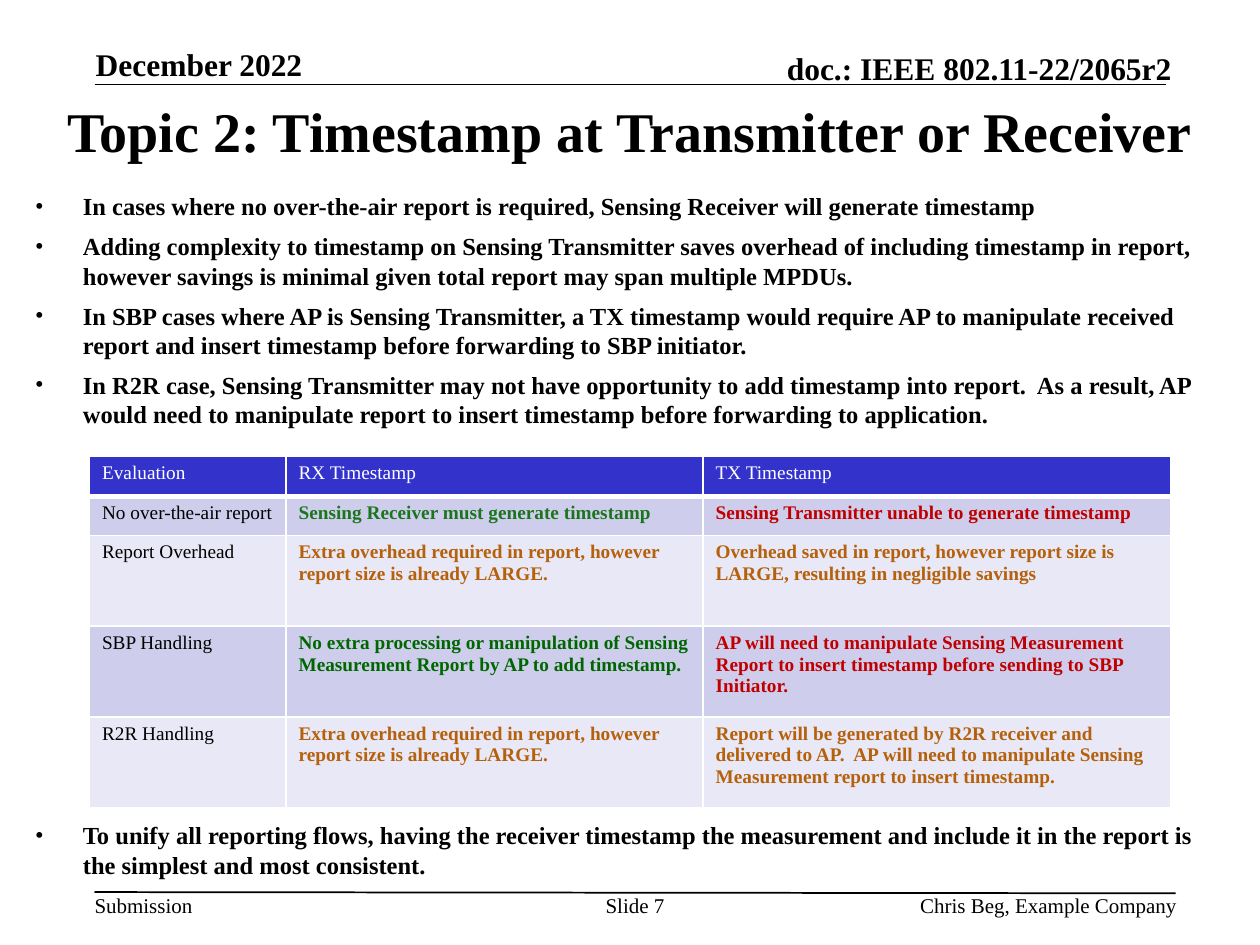
from dataclasses import dataclass

from lxml import etree
from pptx import Presentation
from pptx import util as u
from pptx.dml.color import RGBColor
from pptx.enum import shapes, text
from pptx.oxml import ns

PX = 9144  # EMU in one px, at 100 px to the inch


@dataclass(frozen=True)
class Theme:
    font: str = "Times New Roman"
    ink: str = "000000"
    white: str = "FFFFFF"
    header_fill: str = "3333CC"
    bands: tuple[str, str] = ("CECEEC", "E8E8F6")
    good: str = "1B751D"
    best: str = "006600"
    fair: str = "B5600B"
    bad: str = "C00000"
    title: int = 32
    running_head: int = 18
    body: int = 14
    footer: int = 12
    table: int = 11


@dataclass(frozen=True)
class Area:
    left: int
    top: int
    width: int
    height: int

    def emu(self) -> list[int]:
        return [n * PX for n in (self.left, self.top, self.width, self.height)]


@dataclass(frozen=True)
class Label:
    words: str
    area: Area
    size: int
    bold: bool = False
    align: text.PP_ALIGN = text.PP_ALIGN.LEFT
    anchor: text.MSO_ANCHOR = text.MSO_ANCHOR.TOP
    margins: tuple[int, int] = (0, 0)


@dataclass(frozen=True)
class Verdict:
    words: str
    color: str


@dataclass(frozen=True)
class Evaluation:
    topic: str
    receiver: Verdict
    transmitter: Verdict


THEME = Theme()
PADDING = (10, 5)
INDENT = 38
RULES = [(75, 67, 925, 67), (75, 708, 933, 709)]

LABELS = [
    Label("December 2022", Area(76, 36, 205, 30), THEME.running_head, True,
          anchor=text.MSO_ANCHOR.BOTTOM),
    Label("doc.: IEEE 802.11-22/2065r2", Area(547, 39, 383, 30), THEME.running_head, True,
          text.PP_ALIGN.RIGHT, text.MSO_ANCHOR.BOTTOM),
    Label("Topic 2: Timestamp at Transmitter or Receiver", Area(18, 75, 964, 56),
          THEME.title, True, text.PP_ALIGN.CENTER, text.MSO_ANCHOR.MIDDLE, PADDING),
    Label("Submission", Area(75, 708, 79, 20), THEME.footer),
    Label("Slide 7", Area(475, 708, 58, 40), THEME.footer, align=text.PP_ALIGN.CENTER),
    Label("Chris Beg, Example Company", Area(586, 708, 348, 20), THEME.footer,
          align=text.PP_ALIGN.RIGHT),
]

ARGUMENTS = [
    "In cases where no over-the-air report is required, Sensing Receiver will generate timestamp",
    "Adding complexity to timestamp on Sensing Transmitter saves overhead of including timestamp "
    "in report, however savings is minimal given total report may span multiple MPDUs.",
    "In SBP cases where AP is Sensing Transmitter, a TX timestamp would require AP to manipulate "
    "received report and insert timestamp before forwarding to SBP initiator.",
    "In R2R case, Sensing Transmitter may not have opportunity to add timestamp into report.  "
    "As a result, AP would need to manipulate report to insert timestamp before forwarding to "
    "application.",
]
CONCLUSION = [
    "To unify all reporting flows, having the receiver timestamp the measurement and include it "
    "in the report is the simplest and most consistent.",
]

TABLE_AREA = Area(71, 362, 858, 279)
COLUMN_WIDTHS = [156, 331, 371]
ROW_HEIGHTS = [32, 31, 72, 72, 72]
HEADINGS = ["Evaluation", "RX Timestamp", "TX Timestamp"]
EXTRA_OVERHEAD = Verdict(
    "Extra overhead required in report, however report size is already LARGE.", THEME.fair)
EVALUATIONS = [
    Evaluation("No over-the-air report",
               Verdict("Sensing Receiver must generate timestamp", THEME.good),
               Verdict("Sensing Transmitter unable to generate timestamp", THEME.bad)),
    Evaluation("Report Overhead", EXTRA_OVERHEAD,
               Verdict("Overhead saved in report, however report size is LARGE, resulting in "
                       "negligible savings", THEME.fair)),
    Evaluation("SBP Handling",
               Verdict("No extra processing or manipulation of Sensing Measurement Report by AP "
                       "to add timestamp.", THEME.best),
               Verdict("AP will need to manipulate Sensing Measurement Report to insert timestamp "
                       "before sending to SBP Initiator.", THEME.bad)),
    Evaluation("R2R Handling", EXTRA_OVERHEAD,
               Verdict("Report will be generated by R2R receiver and delivered to AP.  AP will "
                       "need to manipulate Sensing Measurement report to insert timestamp.",
                       THEME.fair)),
]


def write(para, words: str, *, size: int, bold: bool = False, color: str = THEME.ink,
          align: text.PP_ALIGN = text.PP_ALIGN.LEFT) -> None:
    para.alignment = align
    span = para.add_run()
    span.text = words
    span.font.name = THEME.font
    span.font.size = u.Pt(size)
    span.font.bold = bold
    span.font.color.rgb = RGBColor.from_string(color)


def add_frame(page, area: Area, margins: tuple[int, int], anchor: text.MSO_ANCHOR):
    frame = page.shapes.add_textbox(*area.emu()).text_frame
    frame.word_wrap = True
    frame.vertical_anchor = anchor
    frame.margin_left = frame.margin_right = margins[0] * PX
    frame.margin_top = frame.margin_bottom = margins[1] * PX
    return frame


def add_label(page, label: Label) -> None:
    frame = add_frame(page, label.area, label.margins, label.anchor)
    write(frame.paragraphs[0], label.words, size=label.size, bold=label.bold, align=label.align)


def add_bullets(page, area: Area, points: list[str]) -> None:
    frame = add_frame(page, area, PADDING, text.MSO_ANCHOR.TOP)
    for index, point in enumerate(points):
        para = frame.add_paragraph() if index else frame.paragraphs[0]
        write(para, point, size=THEME.body, bold=True)
        para.space_before = u.Pt(6)
        properties = para._p.get_or_add_pPr()
        properties.set("marL", str(INDENT * PX))
        properties.set("indent", str(-INDENT * PX))
        etree.SubElement(properties, ns.qn("a:buFont"), typeface=THEME.font)
        etree.SubElement(properties, ns.qn("a:buChar"), char="•")


def add_rule(page, ends: tuple[int, int, int, int]) -> None:
    rule = page.shapes.add_connector(shapes.MSO_CONNECTOR.STRAIGHT, *(n * PX for n in ends))
    rule.line.color.rgb = RGBColor.from_string(THEME.ink)
    rule.line.width = u.Pt(1)
    etree.SubElement(rule._element.spPr, ns.qn("a:effectLst"))


def style_cell(cell, fill: str, bottom: int) -> None:
    """Draw white borders, with the bottom one in points, and then the fill."""
    properties = cell._tc.get_or_add_tcPr()
    for side, points in (("L", 1), ("R", 1), ("T", 1), ("B", bottom)):
        border = etree.SubElement(properties, ns.qn(f"a:ln{side}"), w=str(u.Pt(points)))
        paint = etree.SubElement(border, ns.qn("a:solidFill"))
        etree.SubElement(paint, ns.qn("a:srgbClr"), val=THEME.white)
    cell.fill.solid()
    cell.fill.fore_color.rgb = RGBColor.from_string(fill)


def add_evaluation_table(page) -> None:
    rows = [[Verdict(heading, THEME.white) for heading in HEADINGS]]
    rows += [[Verdict(e.topic, THEME.ink), e.receiver, e.transmitter] for e in EVALUATIONS]
    table = page.shapes.add_table(len(rows), len(HEADINGS), *TABLE_AREA.emu()).table
    for column, width in zip(table.columns, COLUMN_WIDTHS):
        column.width = width * PX
    for r, (row, height) in enumerate(zip(rows, ROW_HEIGHTS)):
        table.rows[r].height = height * PX
        fill = THEME.bands[(r - 1) % 2] if r else THEME.header_fill
        for c, verdict in enumerate(row):
            cell = table.cell(r, c)
            style_cell(cell, fill, bottom=1 if r else 3)
            write(cell.text_frame.paragraphs[0], verdict.words, size=THEME.table,
                  bold=r > 0 and c > 0, color=verdict.color)


def main() -> None:
    deck = Presentation()
    deck.slide_width, deck.slide_height = 1000 * PX, 750 * PX
    page = deck.slides.add_slide(deck.slide_layouts[6])
    for ends in RULES:
        add_rule(page, ends)
    for label in LABELS:
        add_label(page, label)
    add_evaluation_table(page)
    add_bullets(page, Area(18, 147, 964, 211), ARGUMENTS)
    add_bullets(page, Area(18, 646, 964, 59), CONCLUSION)
    deck.save("out.pptx")


if __name__ == "__main__":
    main()
